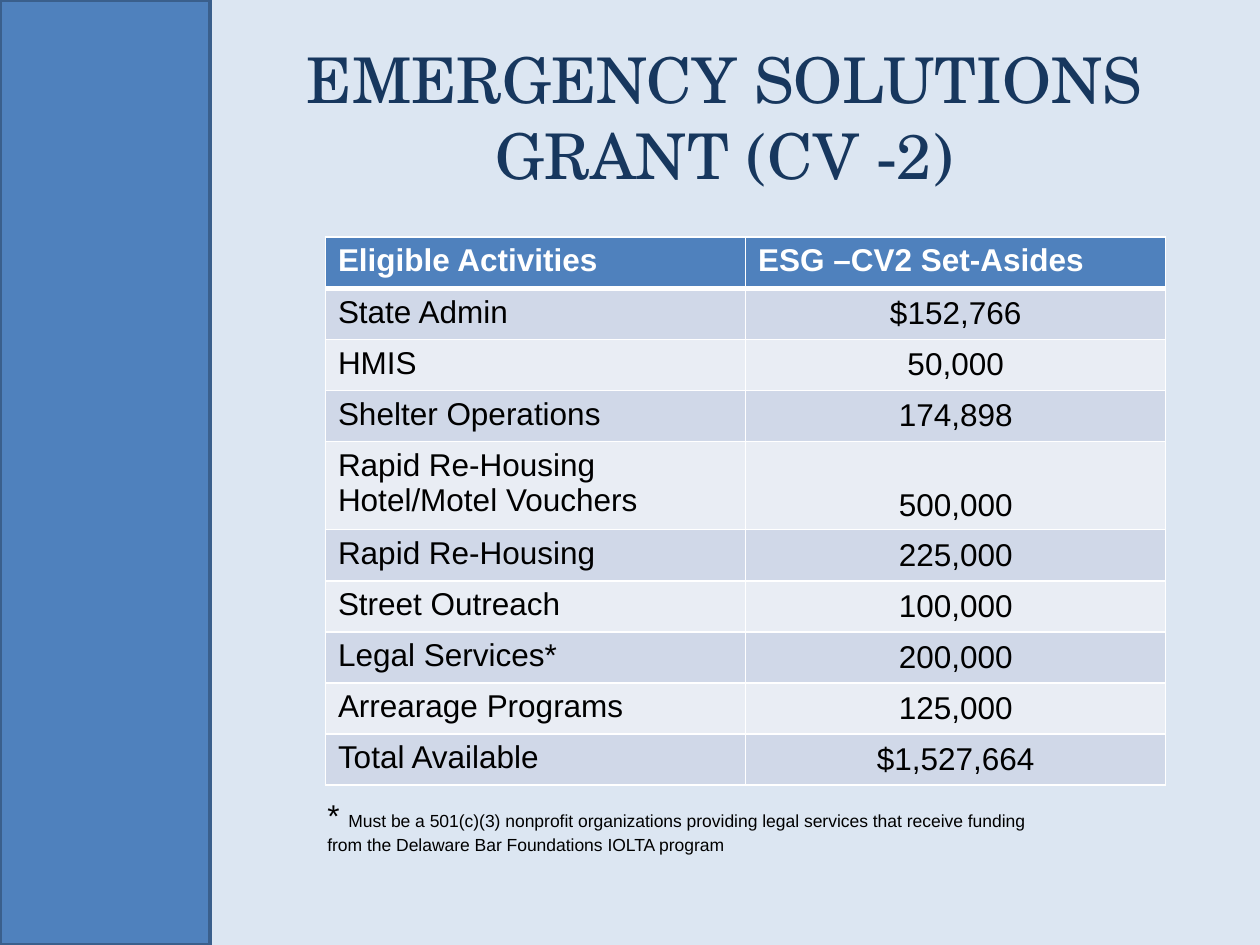
import pptx
import pptx.util
import pptx.dml.color
import pptx.enum.shapes
import pptx.enum.text
import pptx.oxml
import pptx.oxml.ns

Cm, Pt = pptx.util.Cm, pptx.util.Pt
ALIGN = pptx.enum.text.PP_ALIGN
ANCHOR = pptx.enum.text.MSO_ANCHOR

# Content
TITLE = "EMERGENCY SOLUTIONS GRANT (CV -2)"
HEADER = ("Eligible Activities", "ESG –CV2 Set-Asides")
ACTIVITIES = [
    ("State Admin", "$152,766"),
    ("HMIS", "50,000"),
    ("Shelter Operations", "174,898"),
    ("Rapid Re-Housing\nHotel/Motel Vouchers", "500,000"),
    ("Rapid Re-Housing", "225,000"),
    ("Street Outreach", "100,000"),
    ("Legal Services*", "200,000"),
    ("Arrearage Programs", "125,000"),
    ("Total Available", "$1,527,664"),
]
FOOTNOTE = [
    ("* ", 18),
    ("Must be a 501(c)(3) nonprofit organizations providing legal services "
     "that receive funding from the Delaware Bar Foundations IOLTA program", 10),
]
COLORS = {
    "background": "DCE6F2", "blue": "4F81BD", "outline": "3A5F8C",
    "title": "17375E", "odd": "D0D8E8", "even": "E9EDF4",
    "white": "FFFFFF", "black": "000000",
}
ROW_HEIGHT, TALL_ROW_HEIGHT, COLUMN_WIDTH = 1.03, 1.74, 8.47


def rgb(name):
    return pptx.dml.color.RGBColor.from_string(COLORS[name])


def fill(target, name):
    target.fill.solid()
    target.fill.fore_color.rgb = rgb(name)


def style(font, size, color, name="Arial", bold=False):
    font.size, font.name, font.bold = Pt(size), name, bold
    font.color.rgb = rgb(color)


def add_text(s, left, top, width, height):
    tf = s.shapes.add_textbox(Cm(left), Cm(top), Cm(width), Cm(height)).text_frame
    tf.word_wrap = True
    return tf


def add_borders(cell, bottom_width):
    """Draw white borders, placed before the fill as the schema requires."""
    tc_pr = cell._tc.get_or_add_tcPr()
    widths = {"lnL": 1, "lnR": 1, "lnT": 1, "lnB": bottom_width}
    for i, (tag, width) in enumerate(widths.items()):
        tc_pr.insert(i, pptx.oxml.parse_xml(
            f'<a:{tag} {pptx.oxml.ns.nsdecls("a")} w="{Pt(width)}"><a:solidFill>'
            f'<a:srgbClr val="{COLORS["white"]}"/></a:solidFill></a:{tag}>'))


def add_activity_table(s):
    rows = [HEADER] + ACTIVITIES
    heights = [TALL_ROW_HEIGHT if "\n" in row[0] else ROW_HEIGHT for row in rows]
    table = s.shapes.add_table(
        len(rows), 2, Cm(6.56), Cm(4.78),
        Cm(2 * COLUMN_WIDTH), Cm(sum(heights))).table
    for column in table.columns:
        column.width = Cm(COLUMN_WIDTH)
    for i, (row, height) in enumerate(zip(rows, heights)):
        table.rows[i].height = Cm(height)
        header = i == 0
        for j, text in enumerate(row):
            cell = table.cell(i, j)
            cell.text = text
            fill(cell, "blue" if header else "odd" if i % 2 else "even")
            add_borders(cell, 3 if header else 1)
            amount = j == 1 and not header
            if amount:
                # An amount lines up with the last line of its activity
                tall = height == TALL_ROW_HEIGHT
                cell.vertical_anchor = ANCHOR.BOTTOM if tall else ANCHOR.MIDDLE
            for p in cell.text_frame.paragraphs:
                p.alignment = ALIGN.CENTER if amount else ALIGN.LEFT
                style(p.font, 18, "white" if header else "black", bold=header)


def main():
    prs = pptx.Presentation()
    prs.slide_width, prs.slide_height = Cm(25.4), Cm(19.05)
    s = prs.slides.add_slide(prs.slide_layouts[6])
    fill(s.background, "background")

    # Side band
    band = s.shapes.add_shape(pptx.enum.shapes.MSO_SHAPE.RECTANGLE,
                              0, 0, Cm(4.24), prs.slide_height)
    band.shadow.inherit = False
    fill(band, "blue")
    band.line.color.rgb = rgb("outline")
    band.line.width = Pt(2)

    # Title
    tf = add_text(s, 5.08, 0.76, 19.05, 3.18)
    tf.vertical_anchor = ANCHOR.MIDDLE
    p = tf.paragraphs[0]
    p.text, p.alignment = TITLE, ALIGN.CENTER
    style(p.font, 36, "title", "TeX Gyre Schola")

    add_activity_table(s)

    # Footnote
    p = add_text(s, 6.35, 15.93, 15.04, 1.45).paragraphs[0]
    for text, size in FOOTNOTE:
        r = p.add_run()
        r.text = text
        style(r.font, size, "black")

    prs.save("out.pptx")


if __name__ == "__main__":
    main()
